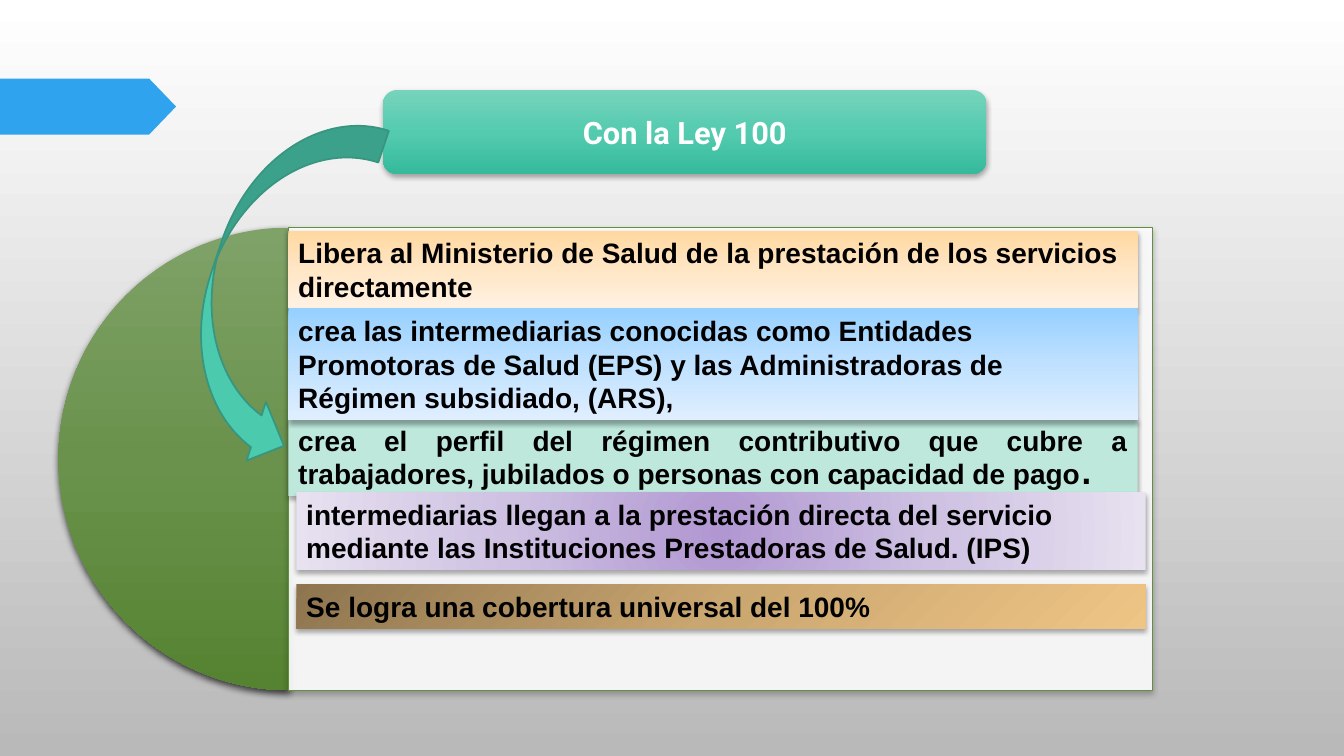
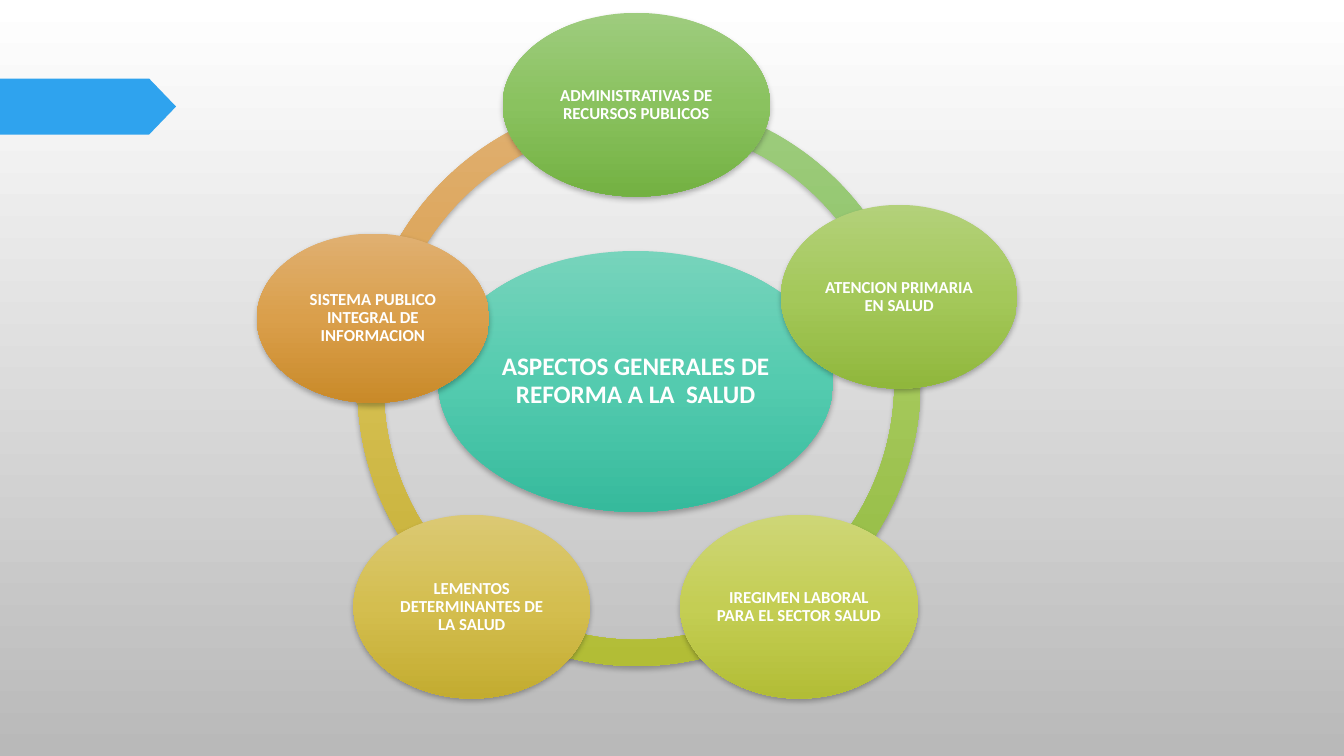
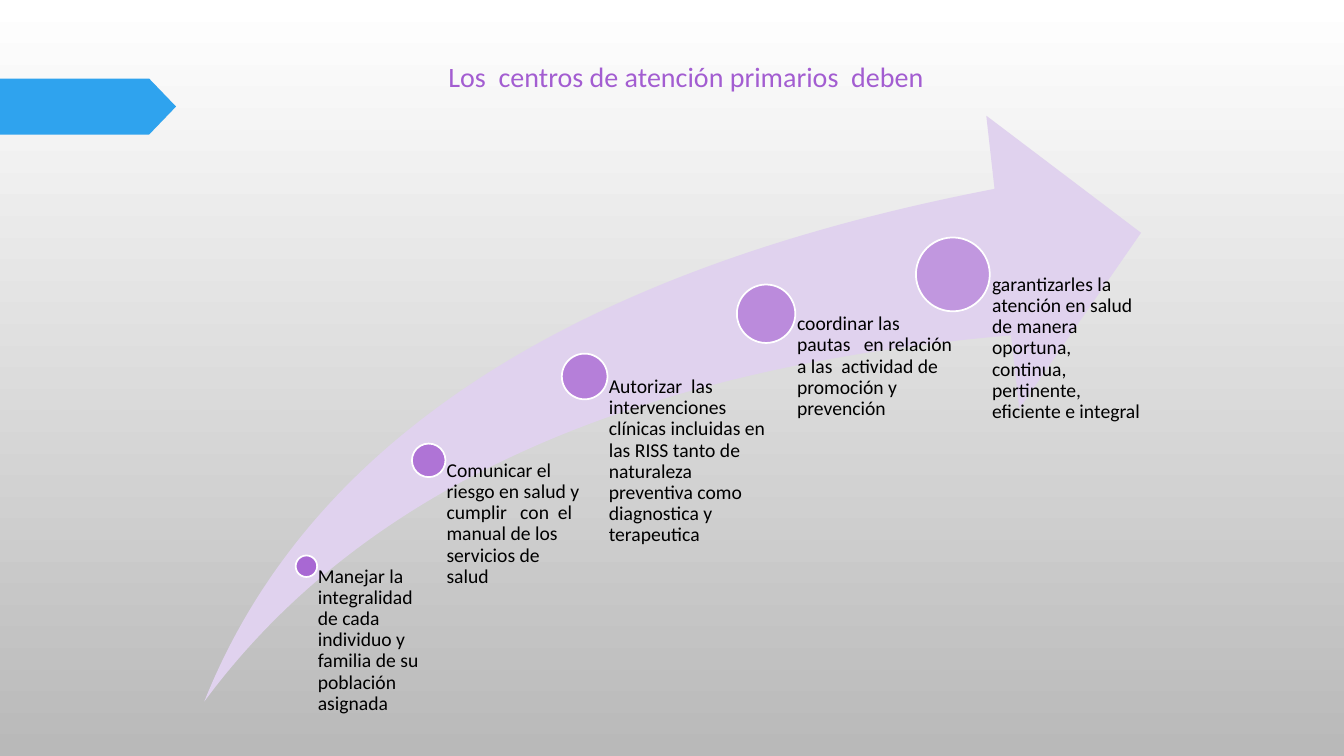
"""Build three slides on the health reform: Ley 100, general aspects and primary care."""
from copy import deepcopy

from lxml.etree import SubElement
from pptx import Presentation
from pptx.dml.color import RGBColor
from pptx.enum.shapes import MSO_SHAPE
from pptx.enum.text import MSO_ANCHOR, PP_ALIGN
from pptx.oxml.ns import qn
from pptx.util import Inches, Pt


def shades(*codes):
    """Turn hex codes into a tuple of gradient colours."""
    return tuple(RGBColor.from_string(code) for code in codes)


WHITE = RGBColor(0xFF, 0xFF, 0xFF)
BLACK = RGBColor(0x00, 0x00, 0x00)
TAG_BLUE = RGBColor(0x2F, 0xA3, 0xEE)
MINT = RGBColor(0xBD, 0xE8, 0xDB)
ARROW_TEAL = RGBColor(0x4B, 0xCA, 0xAD)
ARROW_EDGE = RGBColor(0x37, 0x95, 0x80)
PANEL_EDGE = RGBColor(0x63, 0x8F, 0x40)
PURPLE = RGBColor(0xA3, 0x5D, 0xD1)
LILAC = RGBColor(0xE0, 0xD2, 0xEE)
BACKDROP = shades("FFFFFF", "B9B9B9")
FOREST = shades("7FA268", "6A924C", "558331")
PEACH = shades("FFD8A0", "FFE6C5", "FFF2E3")
SKY = shades("96D0FF", "BFE1FF", "E0EFFF")
VIOLET = shades("B197D2", "CEC1E2", "E7E1F0")
BRONZE = shades("8E754F", "CAA670", "EFC585")
TEAL = shades("77D4BC", "54CBAF", "36BA9C")
GREEN = shades("9ECC7E", "8AC25F", "73B142")
LIME = shades("B3D17A", "A4C85A", "90B73C")
OLIVE = shades("CED677", "C4CE54", "B2BD36")
MUSTARD = shades("DBC974", "D4BE4F", "C3AC30")
ORANGE = shades("E0B071", "DA9F4B", "C98A29")

STRIP_SHADOW = (32, 3.5, 2.2)
GROUP_SHADOW = (28, 4, 2)
PIE_SHADOW = (69, 5, 2)


def paint_gradient(element, fill, colours, angle):
    """Fill with evenly spaced colours; angle runs counter-clockwise."""
    fill.gradient()
    fill.gradient_angle = angle
    stop_list = element.find(".//" + qn("a:gsLst"))
    while len(stop_list) < len(colours):
        stop_list.append(deepcopy(stop_list[0]))
    for index, (stop, colour) in enumerate(zip(fill.gradient_stops, colours)):
        stop.position = index / (len(colours) - 1)
        stop.color.rgb = colour


def make_radial(shape):
    """Turn a linear gradient into a circular one around the centre."""
    linear = shape.element.find(".//" + qn("a:lin"))
    gradient = linear.getparent()
    gradient.remove(linear)
    circle = SubElement(gradient, qn("a:path"), {"path": "circle"})
    SubElement(circle, qn("a:fillToRect"), dict.fromkeys("ltrb", "50000"))


def cast_shadow(shape, opacity, blur, distance):
    """Give the shape a black shadow straight below it."""
    effects = shape.element.spPr.find(qn("a:effectLst"))
    shadow = SubElement(effects, qn("a:outerShdw"), {
        "blurRad": str(Pt(blur)), "dist": str(Pt(distance)), "dir": "5400000",
        "algn": "ctr", "rotWithShape": "0"})
    colour = SubElement(shadow, qn("a:srgbClr"), {"val": str(BLACK)})
    SubElement(colour, qn("a:alpha"), {"val": str(opacity * 1000)})


def write(para, text, size=20, font="Calibri", colour=BLACK, bold=False):
    """Add a formatted span to a paragraph."""
    span = para.add_run()
    span.text = text
    span.font.size = Pt(size)
    span.font.name = font
    span.font.color.rgb = colour
    span.font.bold = bold


class Deck:
    """Holds the presentation, its style and the current slide; lengths are percent of the slide."""

    def __init__(self):
        """Open an empty wide presentation."""
        self.file = Presentation()
        self.file.slide_width = Inches(13.33)
        self.file.slide_height = Inches(7.5)
        self.page = None

    def across(self, share):
        """Convert a share of the slide's width."""
        return round(self.file.slide_width * share / 100)

    def down(self, share):
        """Convert a share of the slide's height."""
        return round(self.file.slide_height * share / 100)

    def area(self, left, top, width, height):
        """Convert a rectangle of shares."""
        return self.across(left), self.down(top), self.across(width), self.down(height)

    def new_page(self):
        """Start a slide with the shared backdrop and tag."""
        self.page = self.file.slides.add_slide(self.file.slide_layouts[6])
        paint_gradient(self.page.element, self.page.background.fill, BACKDROP, 270)
        corners = [(11.1, 10.4), (13.1, 14.1), (11.1, 17.8), (0, 17.8)]
        outline = self.page.shapes.build_freeform(0, self.down(10.4), scale=1)
        outline.add_line_segments([(self.across(x), self.down(y)) for x, y in corners])
        self.style(outline.convert_to_shape(), TAG_BLUE)

    def style(self, shape, fill, angle=270, opacity=100, line=None, line_width=0.75, shadow=None):
        """Set fill, outline and shadow of a shape."""
        shape.shadow.inherit = False
        if isinstance(fill, RGBColor):
            shape.fill.solid()
            shape.fill.fore_color.rgb = fill
            if opacity < 100:
                colour = shape.element.spPr.find(qn("a:solidFill"))[0]
                SubElement(colour, qn("a:alpha"), {"val": str(opacity * 1000)})
        else:
            paint_gradient(shape.element, shape.fill, fill, angle)
        if line is None:
            shape.line.fill.background()
        else:
            shape.line.color.rgb = line
            shape.line.width = Pt(line_width)
        if shadow:
            cast_shadow(shape, *shadow)

    def shape(self, kind, area, fill, adjust=(), **look):
        """Draw a preset shape."""
        shape = self.page.shapes.add_shape(kind, *self.area(*area))
        for index, value in enumerate(adjust):
            shape.adjustments[index] = value
        self.style(shape, fill, **look)
        return shape

    def fill_text(self, box, text, align=PP_ALIGN.LEFT, anchor=MSO_ANCHOR.TOP,
                  margin=None, spacing=None, **look):
        """Put one paragraph in a shape or text box and return it."""
        frame = box.text_frame
        frame.word_wrap = True
        frame.vertical_anchor = anchor
        if margin is not None:
            frame.margin_left = frame.margin_right = Inches(margin)
            frame.margin_top = frame.margin_bottom = Inches(margin)
        para = frame.paragraphs[0]
        para.alignment = align
        if spacing:
            para.line_spacing = spacing
        write(para, text, **look)
        return para

    def text(self, area, text, **look):
        """Add a text box."""
        return self.fill_text(self.page.shapes.add_textbox(*self.area(*area)), text, **look)

    def strip(self, left, top, height, fill, text, align=PP_ALIGN.LEFT, angle=270):
        """Draw a coloured band of bold text; return shape and paragraph."""
        band = self.shape(MSO_SHAPE.RECTANGLE, (left, top, 63.2, height), fill,
                          angle=angle, shadow=STRIP_SHADOW)
        return band, self.fill_text(band, text, align=align, font="Arial", bold=True)

    def bubble(self, area, fill, text, size=12):
        """Draw an ellipse with centred white text."""
        bubble = self.shape(MSO_SHAPE.OVAL, area, fill, shadow=GROUP_SHADOW)
        self.fill_text(bubble, text, align=PP_ALIGN.CENTER, anchor=MSO_ANCHOR.MIDDLE,
                       margin=0.02, spacing=0.9, size=size, colour=WHITE, bold=True)

    def arc(self, left, top, start, end, fill):
        """Draw a ring segment between two angles in degrees."""
        self.shape(MSO_SHAPE.BLOCK_ARC, (left, top, 42.3, 75.2), fill,
                   adjust=(start * 0.6, end * 0.6, 4.6 / 100), shadow=GROUP_SHADOW)

    def dot(self, centre_x, centre_y, diameter, opacity):
        """Draw a round marker, its diameter a share of the width."""
        height = diameter * self.file.slide_width / self.file.slide_height
        self.shape(MSO_SHAPE.OVAL,
                   (centre_x - diameter / 2, centre_y - height / 2, diameter, height),
                   PURPLE, opacity=opacity, line=WHITE, line_width=1.25)


def build_law(deck):
    """Slide with the effects of Ley 100."""
    deck.new_page()
    deck.shape(MSO_SHAPE.PIE, (4.35, 30.1, 34.4, 61.2), FOREST,
               adjust=(90 * 0.6, 270 * 0.6), shadow=PIE_SHADOW)
    deck.shape(MSO_SHAPE.RECTANGLE, (21.45, 30.1, 64.3, 61.2), WHITE, opacity=90,
               line=PANEL_EDGE, shadow=GROUP_SHADOW)
    left, indented = 21.45, 22.05
    _, para = deck.strip(left, 55.3, 10.3, MINT,
                         "crea el perfil del régimen contributivo que cubre a trabajadores, "
                         "jubilados o personas con capacidad de pago", align=PP_ALIGN.JUSTIFY)
    write(para, ".", font="DejaVu Sans", bold=True)
    deck.strip(left, 30.5, 10.3, PEACH,
               "Libera al Ministerio de Salud de la prestación de los servicios directamente")
    deck.strip(left, 40.8, 14.8, SKY,
               "crea las intermediarias conocidas como Entidades Promotoras de Salud (EPS) "
               "y las Administradoras de Régimen subsidiado, (ARS),")
    band, _ = deck.strip(indented, 65.1, 10.3, VIOLET,
                         "intermediarias llegan a la prestación directa del servicio mediante "
                         "las Instituciones Prestadoras de Salud. (IPS)")
    make_radial(band)
    deck.strip(indented, 77.3, 5.9, BRONZE, "Se logra una cobertura universal del 100%", angle=315)
    heading = deck.shape(MSO_SHAPE.FLOWCHART_ALTERNATE_PROCESS, (28.5, 11.9, 44.9, 11.1), TEAL,
                         shadow=STRIP_SHADOW)
    deck.fill_text(heading, "Con la Ley 100", align=PP_ALIGN.CENTER, anchor=MSO_ANCHOR.MIDDLE,
                   size=22, font="Roboto", colour=WHITE, bold=True)
    arrow = deck.shape(MSO_SHAPE.CURVED_RIGHT_ARROW, (15.7, 13.5, 9.2, 48), ARROW_TEAL,
                       adjust=(0.27, 0.5, 0.25), line=ARROW_EDGE, line_width=1.25)
    arrow.rotation = 18.4


def build_aspects(deck):
    """Slide with the ring of reform aspects."""
    deck.new_page()
    for arc in [
        (26.8, 12.9, 193.21, 268.39, ORANGE),
        (26.6, 13.6, 127.7, 194.28, MUSTARD),
        (26.2, 12.9, 54, 126, OLIVE),
        (26.2, 12.9, 342, 54, LIME),
        (26.2, 12.9, 270, 342, GREEN),
    ]:
        deck.arc(*arc)
    deck.bubble((32.6, 33.2, 29.4, 34.5), TEAL, "ASPECTOS GENERALES DE REFORMA A LA  SALUD", size=18)
    for area, fill, text in [
        ((37.4, 1.7, 19.9, 24.3), GREEN, "ADMINISTRATIVAS DE RECURSOS PUBLICOS"),
        ((58.1, 27.1, 17.6, 24.3), LIME, "ATENCION PRIMARIA EN SALUD"),
        ((50.6, 68.1, 17.7, 24.3), OLIVE, "IREGIMEN LABORAL PARA EL SECTOR SALUD"),
        ((26.3, 68.1, 17.6, 24.3), MUSTARD, "LEMENTOS DETERMINANTES DE LA SALUD"),
        ((19.1, 30.9, 17.3, 22.4), ORANGE, "SISTEMA PUBLICO INTEGRAL DE INFORMACION"),
    ]:
        deck.bubble(area, fill, text)


def build_centres(deck):
    """Slide with the duties of primary care centres along an arrow."""
    deck.new_page()
    left, width, bottom = 15.2, 69.7, 93.3
    deck.shape(MSO_SHAPE.SWOOSH_ARROW, (left, 15.3, width, 77.5), LILAC, adjust=(0.25, 0.25))
    duties = [
        (22.8, 74.9, 1.6,
         "Manejar la integralidad de cada individuo y familia de su población asignada"),
        (31.9, 60.9, 2.5,
         "Comunicar el riesgo en salud y cumplir   con  el  manual de los servicios de salud"),
        (43.5, 49.8, 3.4,
         "Autorizar  las intervenciones clínicas incluidas en las RISS tanto de naturaleza "
         "preventiva como diagnostica y terapeutica"),
        (57, 41.5, 4.35,
         "coordinar las  pautas   en relación a las  actividad de promoción y prevención"),
        (70.9, 36.3, 5.5,
         "garantizarles la atención en salud de manera oportuna, continua, pertinente, "
         "eficiente e integral"),
    ]
    ends = [duty[0] for duty in duties[1:]] + [left + width]
    for index, ((x, y, diameter, text), end) in enumerate(zip(duties, ends)):
        deck.dot(x, y, diameter, 90 - 10 * index)
        start = x + diameter * 0.53
        deck.text((start, y, end - start, bottom - y), text, size=14, margin=0, spacing=0.9)
    deck.text((17.3, 5.9, 67.5, 8.4), "Los  centros de atención primarios  deben",
              align=PP_ALIGN.CENTER, anchor=MSO_ANCHOR.MIDDLE, colour=PURPLE)


def main():
    """Build and save the presentation."""
    deck = Deck()
    build_law(deck)
    build_aspects(deck)
    build_centres(deck)
    deck.file.save("out.pptx")


if __name__ == "__main__":
    main()
